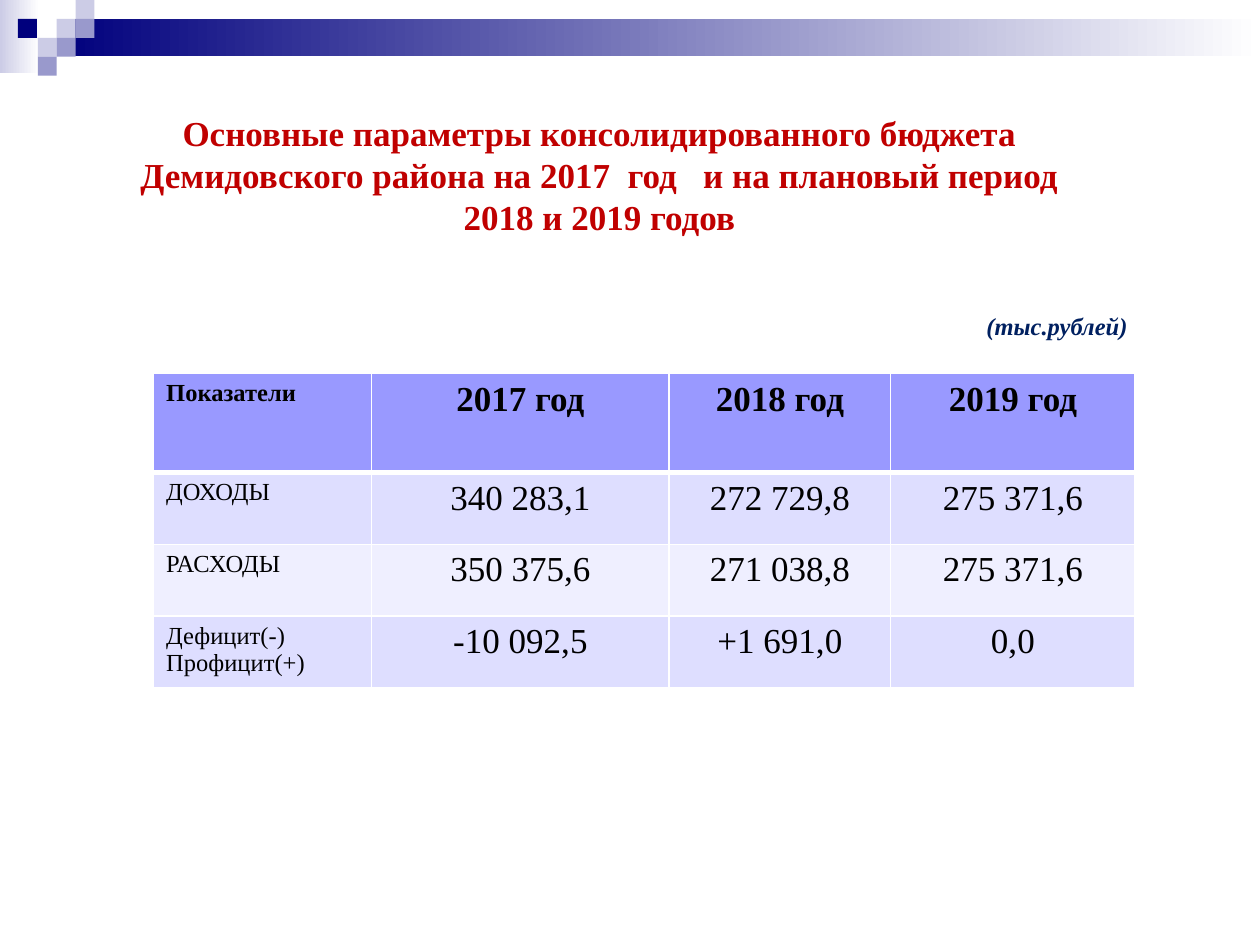
from lxml.etree import SubElement
from pptx import Presentation
from pptx.dml.color import RGBColor
from pptx.enum.shapes import MSO_SHAPE as Shape
from pptx.enum.text import MSO_ANCHOR as Anchor, PP_ALIGN as Align
from pptx.oxml.ns import qn
from pptx.util import Pt

FONT = "Times New Roman"
WHITE = RGBColor(0xFF, 0xFF, 0xFF)
BLACK = RGBColor(0, 0, 0)
NAVY = RGBColor(0x00, 0x00, 0x7D)
LAVENDER = RGBColor(0xCC, 0xCC, 0xE6)
VIOLET = RGBColor(0x99, 0x99, 0xCC)
RED = RGBColor(0xC0, 0x00, 0x00)
DARK_BLUE = RGBColor(0x00, 0x20, 0x60)
HEADER_FILL = RGBColor(0x99, 0x99, 0xFF)
BAND_FILLS = [RGBColor(0xDE, 0xDE, 0xFF), RGBColor(0xEF, 0xEF, 0xFF)]

TITLE = [
    "Основные параметры консолидированного бюджета",
    "Демидовского района на 2017  год   и на плановый период 2018 и 2019 годов",
]
UNIT = "(тыс.рублей)"
ROWS = [
    ["Показатели", "2017 год", "2018 год", "2019 год"],
    ["ДОХОДЫ", "340 283,1", "272 729,8", "275 371,6"],
    ["РАСХОДЫ", "350 375,6", "271 038,8", "275 371,6"],
    ["Дефицит(-)\nПрофицит(+)", "-10 092,5", "+1 691,0", "0,0"],
]
COLUMN_WIDTHS = [124.6, 170, 126.6, 139.7]
ROW_HEIGHTS = [56.6, 41.1, 41.1, 41.1]

SQUARE = 10.8
# column and row of each square, counted in squares
SQUARES = [
    (3, 1, LAVENDER), (4, 0, LAVENDER), (4, 1, VIOLET), (2, 2, LAVENDER),
    (0.95, 1, NAVY), (3, 2, VIOLET), (2, 3, VIOLET),
]


def add_rectangle(slide, left, top, width, height, color, fade=False):
    """Add a borderless rectangle, plain or fading to white on the right."""
    shape = slide.shapes.add_shape(
        Shape.RECTANGLE, Pt(left), Pt(top), Pt(width), Pt(height))
    shape.shadow.inherit = False
    shape.line.fill.background()
    if fade:
        shape.fill.gradient()
        shape.fill.gradient_angle = 0
        for stop, position, stop_color in zip(
                shape.fill.gradient_stops, (0, 1), (color, WHITE)):
            stop.position = position
            stop.color.rgb = stop_color
    else:
        shape.fill.solid()
        shape.fill.fore_color.rgb = color


def write(frame, lines, size, color, align=Align.LEFT, bold=False, italic=False):
    frame.text = "\n".join(lines)
    for paragraph in frame.paragraphs:
        paragraph.alignment = align
        font = paragraph.font
        font.name, font.size, font.color.rgb = FONT, Pt(size), color
        font.bold, font.italic = bold, italic


def set_borders(cell, bottom):
    """Draw white cell edges, 1 pt except for the bottom one."""
    properties = cell._tc.get_or_add_tcPr()
    for edge, width in (("L", 1), ("R", 1), ("T", 1), ("B", bottom)):
        line = SubElement(properties, qn(f"a:ln{edge}"), w=str(Pt(width)))
        fill = SubElement(line, qn("a:solidFill"))
        SubElement(fill, qn("a:srgbClr"), val=str(WHITE))


def add_decoration(slide):
    add_rectangle(slide, 0, 0, 22.5, 41.75, LAVENDER, fade=True)
    add_rectangle(slide, 3 * SQUARE, SQUARE, 687.6, 21.4, NAVY, fade=True)
    for column, row, color in SQUARES:
        add_rectangle(slide, column * SQUARE, row * SQUARE, SQUARE, SQUARE, color)


def add_title(slide):
    frame = slide.shapes.add_textbox(Pt(67.5), Pt(39.5), Pt(550), Pt(96)).text_frame
    frame.word_wrap = True
    frame.vertical_anchor = Anchor.BOTTOM
    frame.margin_left = frame.margin_right = frame.margin_bottom = 0
    write(frame, TITLE, 20, RED, Align.CENTER, bold=True)


def add_budget_table(slide):
    table = slide.shapes.add_table(
        len(ROWS), len(COLUMN_WIDTHS), Pt(87.8), Pt(213.4),
        Pt(sum(COLUMN_WIDTHS)), Pt(sum(ROW_HEIGHTS))).table
    for column, width in zip(table.columns, COLUMN_WIDTHS):
        column.width = Pt(width)
    for r, (texts, height) in enumerate(zip(ROWS, ROW_HEIGHTS)):
        table.rows[r].height = Pt(height)
        header = r == 0
        for c, text in enumerate(texts):
            cell = table.cell(r, c)
            set_borders(cell, bottom=3 if header else 1)
            cell.fill.solid()
            cell.fill.fore_color.rgb = HEADER_FILL if header else BAND_FILLS[(r - 1) % 2]
            size, align = (20, Align.CENTER) if c else (14, Align.LEFT)
            write(cell.text_frame, text.split("\n"), size, BLACK, align, bold=header)


def add_unit(slide):
    frame = slide.shapes.add_textbox(Pt(556.6), Pt(174.2), Pt(95.8), Pt(24.5)).text_frame
    frame.word_wrap = False
    write(frame, [UNIT], 14, DARK_BLUE, bold=True, italic=True)


def main():
    presentation = Presentation()
    presentation.slide_width, presentation.slide_height = Pt(720), Pt(540)
    slide = presentation.slides.add_slide(presentation.slide_layouts[6])
    add_decoration(slide)
    add_title(slide)
    add_budget_table(slide)
    add_unit(slide)
    presentation.save("out.pptx")


if __name__ == "__main__":
    main()
